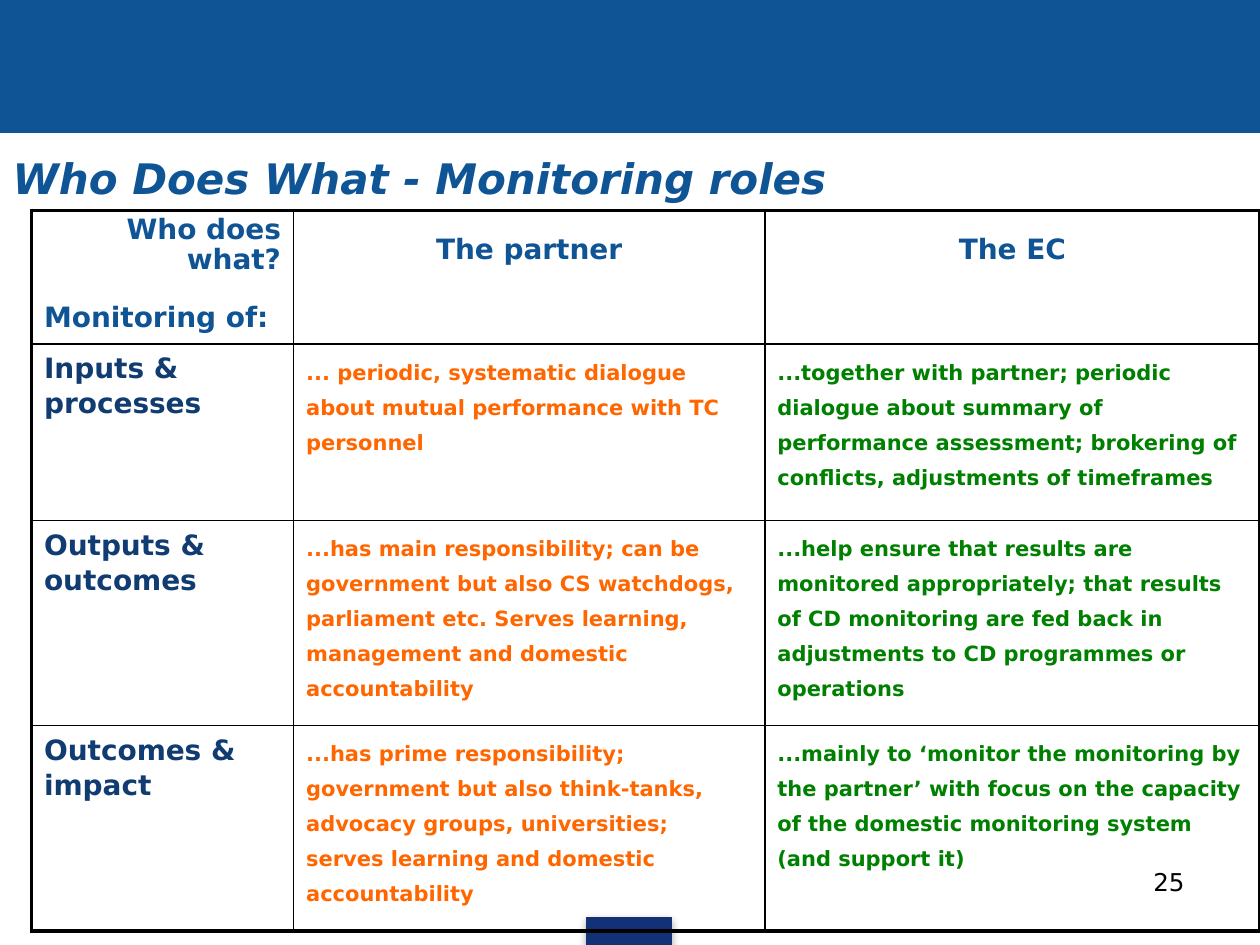
from dataclasses import dataclass

from lxml import etree
from pptx import Presentation
from pptx.dml.color import RGBColor
from pptx.enum.shapes import MSO_SHAPE
from pptx.enum.text import MSO_ANCHOR, PP_ALIGN
from pptx.oxml import parse_xml
from pptx.oxml.ns import nsdecls, qn
from pptx.util import Inches, Pt

RECTANGLE = MSO_SHAPE.RECTANGLE
MIDDLE = MSO_ANCHOR.MIDDLE
LEFT, CENTER, RIGHT = PP_ALIGN.LEFT, PP_ALIGN.CENTER, PP_ALIGN.RIGHT

FONT = "DejaVu Sans"
COLORS = {
    "blue": "0F5494",
    "navy": "133176",
    "stage": "103C72",
    "partner": "FF6600",
    "ec": "008000",
    "black": "000000",
}
WIDTH, HEIGHT = Inches(10), Inches(7.5)
COLUMN_SHARES = (0.208, 0.374, 0.393)
ROW_SHARES = (0.1413, 0.1867, 0.2173, 0.2173)
OUTER_LINE, INNER_LINE = Pt(2.25), Pt(1)


@dataclass(frozen=True)
class Area:
    """A rectangle in shares of the slide's width and height."""

    left: float
    top: float
    width: float
    height: float

    def box(self) -> tuple:
        """Return left, top, width and height as lengths."""
        return (int(self.left * WIDTH), int(self.top * HEIGHT),
                int(self.width * WIDTH), int(self.height * HEIGHT))


@dataclass(frozen=True)
class Style:
    """The look of a paragraph."""

    size: float
    color: str
    align: PP_ALIGN = LEFT
    spacing: object = None
    bold: bool = True
    italic: bool = False


@dataclass(frozen=True)
class Role:
    """One monitoring stage and what each side does in it."""

    stage: str
    partner: str
    ec: str


CORNER_WHO = Style(16, "blue", RIGHT, 0.9)
CORNER_WHAT = Style(16, "blue", LEFT, 0.9)
ACTOR = Style(16, "blue", CENTER, Pt(28))
ROLE_STYLES = (
    Style(16, "stage", spacing=Pt(20)),
    Style(12, "partner", spacing=Pt(20)),
    Style(12, "ec", spacing=Pt(20)),
)
ROLES = (
    Role("Inputs & processes",
         "... periodic, systematic dialogue about mutual performance with TC personnel",
         "...together with partner; periodic dialogue about summary of performance "
         "assessment; brokering of conflicts, adjustments of timeframes"),
    Role("Outputs & outcomes",
         "...has main responsibility; can be government but also CS watchdogs, "
         "parliament etc. Serves learning, management and domestic accountability",
         "...help ensure that results are monitored appropriately; that results of CD "
         "monitoring are fed back in adjustments to CD programmes or operations"),
    Role("Outcomes & impact",
         "...has prime responsibility; government but also think-tanks, advocacy "
         "groups, universities; serves learning and domestic accountability",
         "...mainly to ‘monitor the monitoring by the partner’ with focus on the "
         "capacity of the domestic monitoring system (and support it)"),
)


def write(paragraph, text: str, style: Style) -> None:
    """Put styled text into a paragraph."""
    paragraph.text = text
    paragraph.alignment = style.align
    if style.spacing is not None:
        paragraph.line_spacing = style.spacing
    for run in paragraph.runs:
        run.font.name = FONT
        run.font.size = Pt(style.size)
        run.font.bold = style.bold
        run.font.italic = style.italic
        run.font.color.rgb = RGBColor.from_string(COLORS[style.color])


def add_block(slide, area: Area, color: str):
    """Draw a plain filled rectangle."""
    block = slide.shapes.add_shape(RECTANGLE, *area.box())
    block.shadow.inherit = False
    block.fill.solid()
    block.fill.fore_color.rgb = RGBColor.from_string(COLORS[color])
    block.line.color.rgb = RGBColor.from_string(COLORS[color])
    block.line.width = Pt(0.75)
    return block


def add_soft_shadow(block) -> None:
    """Give a block a faint shadow below it."""
    effects = block._element.spPr.find(qn("a:effectLst"))
    effects.append(parse_xml(
        f'<a:outerShdw {nsdecls("a")} blurRad="{Pt(5)}" dist="{Pt(1.8)}" dir="5400000">'
        f'<a:srgbClr val="{COLORS["black"]}"><a:alpha val="35000"/></a:srgbClr>'
        '</a:outerShdw>'))


def frame_cell(cell, row: int, column: int) -> None:
    """Clear a cell's fill and rule it, heavier along the table's edge."""
    edges = {
        "a:lnL": column == 0,
        "a:lnR": column == len(COLUMN_SHARES) - 1,
        "a:lnT": row == 0,
        "a:lnB": row == len(ROW_SHARES) - 1,
    }
    properties = cell._tc.get_or_add_tcPr()
    for tag, outer in edges.items():
        line = etree.SubElement(properties, qn(tag), w=str(OUTER_LINE if outer else INNER_LINE))
        fill = etree.SubElement(line, qn("a:solidFill"))
        etree.SubElement(fill, qn("a:srgbClr"), val=COLORS["black"])
    cell.fill.background()


def add_role_table(slide, area: Area) -> None:
    """Draw the table of monitoring roles."""
    table = slide.shapes.add_table(len(ROW_SHARES), len(COLUMN_SHARES), *area.box()).table
    table.first_row = table.horz_banding = False
    for column, share in zip(table.columns, COLUMN_SHARES):
        column.width = int(share * WIDTH)
    for row, share in zip(table.rows, ROW_SHARES):
        row.height = int(share * HEIGHT)
    for row in range(len(ROW_SHARES)):
        for column in range(len(COLUMN_SHARES)):
            frame_cell(table.cell(row, column), row, column)

    corner = table.cell(0, 0).text_frame
    write(corner.paragraphs[0], "Who does what?", CORNER_WHO)
    monitoring = corner.add_paragraph()
    write(monitoring, "Monitoring of:", CORNER_WHAT)
    monitoring.space_before = Pt(17)
    for column, actor in enumerate(("The partner", "The EC"), start=1):
        write(table.cell(0, column).text_frame.paragraphs[0], actor, ACTOR)
    for row, role in enumerate(ROLES, start=1):
        for column, text in enumerate((role.stage, role.partner, role.ec)):
            write(table.cell(row, column).text_frame.paragraphs[0], text, ROLE_STYLES[column])


def main() -> None:
    """Build the slide and save it."""
    deck = Presentation()
    deck.slide_width, deck.slide_height = WIDTH, HEIGHT
    slide = deck.slides.add_slide(deck.slide_layouts[5])

    add_block(slide, Area(0, 0, 1, 0.14), "blue")
    add_soft_shadow(add_block(slide, Area(0.466, 0.971, 0.067, 0.029), "navy"))

    page_number = slide.shapes.add_textbox(*Area(0.717, 0.911, 0.233, 0.069).box())
    page_number.text_frame.word_wrap = True
    write(page_number.text_frame.paragraphs[0], "25", Style(14, "black", RIGHT, bold=False))

    title = slide.shapes.title
    title.left, title.top, title.width, title.height = Area(0, 0.144, 0.852, 0.089).box()
    title.text_frame.vertical_anchor = MIDDLE
    write(title.text_frame.paragraphs[0], "Who Does What - Monitoring roles",
          Style(24, "blue", italic=True))

    add_role_table(slide, Area(0.025, 0.2227, sum(COLUMN_SHARES), sum(ROW_SHARES)))
    deck.save("out.pptx")


if __name__ == "__main__":
    main()
